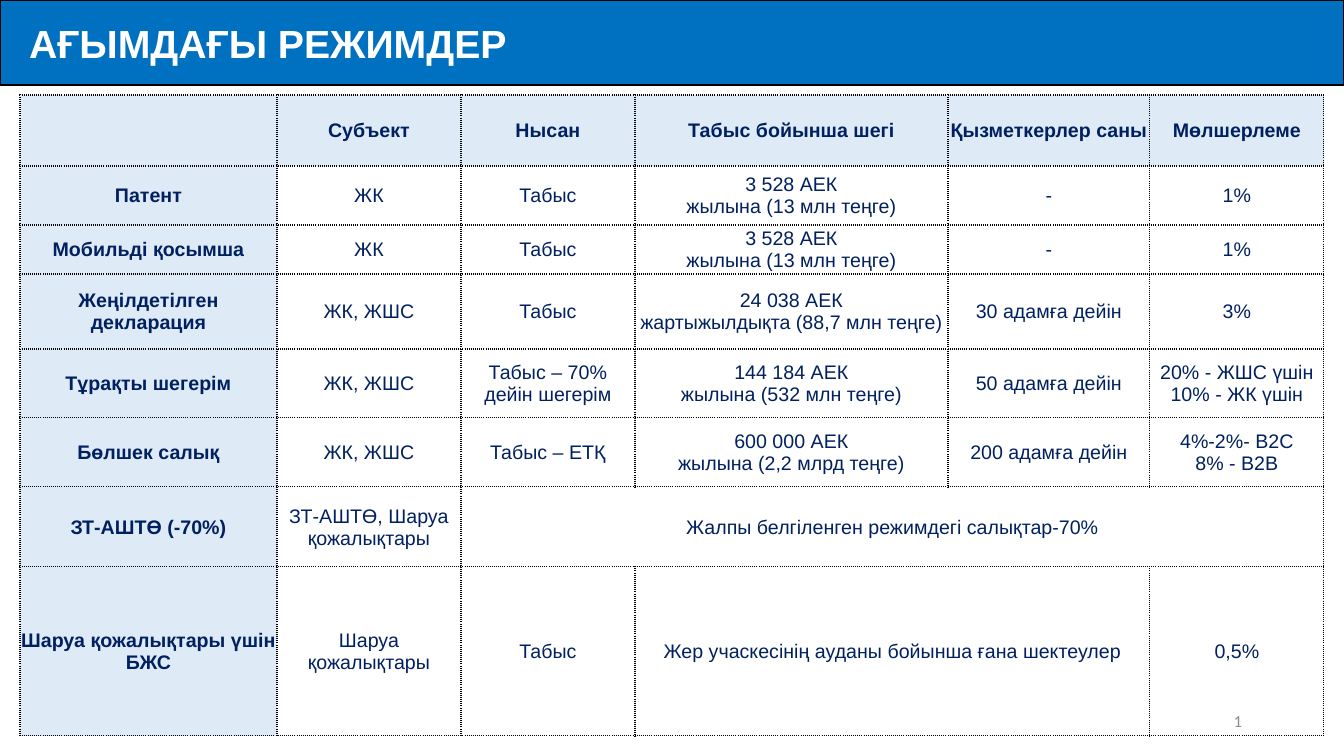
from lxml.etree import SubElement
from pptx import Presentation
from pptx.dml.color import RGBColor
from pptx.enum.text import MSO_ANCHOR, MSO_AUTO_SIZE, PP_ALIGN
from pptx.oxml.ns import qn
from pptx.util import Emu, Pt

HEADING = "АҒЫМДАҒЫ РЕЖИМДЕР"
REGIMES = [
    ["", "Субъект", "Нысан", "Табыс бойынша шегі", "Қызметкерлер саны", "Мөлшерлеме"],
    ["Патент", "ЖК", "Табыс", "3 528 АЕК\vжылына (13 млн теңге)", "-", "1%"],
    ["Мобильді қосымша", "ЖК", "Табыс", "3 528 АЕК\vжылына (13 млн теңге)", "-", "1%"],
    ["Жеңілдетілген декларация", "ЖК, ЖШС", "Табыс",
     "24 038 АЕК\vжартыжылдықта (88,7 млн теңге)", "30 адамға дейін", "3%"],
    ["Тұрақты шегерім", "ЖК, ЖШС", "Табыс – 70% дейін шегерім",
     "144 184 АЕК\vжылына (532 млн теңге)", "50 адамға дейін", "20% - ЖШС үшін\n10% - ЖК үшін"],
    ["Бөлшек салық", "ЖК, ЖШС", "Табыс – ЕТҚ",
     "600 000 АЕК\vжылына (2,2 млрд теңге)", "200 адамға дейін", "4%-2%- В2С\n8% - В2В"],
    ["ЗТ-АШТӨ (-70%)", "ЗТ-АШТӨ, Шаруа қожалықтары",
     "Жалпы белгіленген режимдегі салықтар-70%", "", "", ""],
    ["Шаруа қожалықтары үшін БЖС", "Шаруа қожалықтары", "Табыс",
     "Жер учаскесінің ауданы бойынша ғана шектеулер", "", "0,5%"],
]
MERGES = [(6, 2, 5), (7, 3, 4)]
COLUMN_WIDTHS = [257, 184, 174, 313, 202, 174]
ROW_HEIGHTS = [71, 59, 49, 75, 69, 69, 80, 169]
NAVY, PALE, WHITE, BLACK = "002060", "DEEBF7", "FFFFFF", "000000"


def px(length):
    return Emu(round(length * 914400 / 100.8))


def color(value):
    return RGBColor.from_string(value)


def style(font, size, name, value, bold=False):
    font.size, font.name, font.bold = Pt(size), name, bold
    font.color.rgb = color(value)


def write(frame, text, bold):
    for index, line in enumerate(text.split("\n")):
        paragraph = frame.paragraphs[0] if index == 0 else frame.add_paragraph()
        paragraph.alignment = PP_ALIGN.CENTER
        for part, words in enumerate(line.split("\v")):
            if part:
                paragraph.add_line_break()
            run = paragraph.add_run()
            run.text = words
            style(run.font, 14, "Arial", NAVY, bold)


def dot_borders(cell):
    properties = cell._tc.get_or_add_tcPr()
    for index, side in enumerate(("lnL", "lnR", "lnT", "lnB")):
        border = properties.makeelement(qn(f"a:{side}"), {"w": str(Pt(1))})
        fill = SubElement(border, qn("a:solidFill"))
        SubElement(fill, qn("a:srgbClr"), val=BLACK)
        SubElement(border, qn("a:prstDash"), val="sysDot")
        properties.insert(index, border)


deck = Presentation()
deck.slide_width, deck.slide_height = px(1344), px(756)
slide = deck.slides.add_slide(deck.slide_layouts[5])

banner = slide.shapes.title
banner.left, banner.top, banner.width, banner.height = px(0), px(0), px(1344), px(85)
banner.fill.solid()
banner.fill.fore_color.rgb = color("0070C0")
banner.line.color.rgb = color(BLACK)
banner.line.width = Pt(1)
heading = banner.text_frame
heading.auto_size = MSO_AUTO_SIZE.NONE
heading.vertical_anchor = MSO_ANCHOR.MIDDLE
heading.margin_left = px(29)
heading.paragraphs[0].alignment = PP_ALIGN.LEFT
heading_run = heading.paragraphs[0].add_run()
heading_run.text = HEADING
style(heading_run.font, 28, "Arial", WHITE, True)

regimes = slide.shapes.add_table(
    len(REGIMES), len(COLUMN_WIDTHS), px(20), px(95),
    px(sum(COLUMN_WIDTHS)), px(sum(ROW_HEIGHTS))).table
for column, width in zip(regimes.columns, COLUMN_WIDTHS):
    column.width = px(width)
for row, height in zip(regimes.rows, ROW_HEIGHTS):
    row.height = px(height)
for r, regime in enumerate(REGIMES):
    for c, text in enumerate(regime):
        cell = regimes.cell(r, c)
        is_label = r == 0 or c == 0
        cell.fill.solid()
        cell.fill.fore_color.rgb = color(PALE if is_label else WHITE)
        cell.vertical_anchor = MSO_ANCHOR.MIDDLE
        cell.margin_left = cell.margin_right = cell.margin_top = px(1)
        cell.margin_bottom = 0
        dot_borders(cell)
        if text:
            write(cell.text_frame, text, is_label)
for r, first, last in MERGES:
    regimes.cell(r, first).merge(regimes.cell(r, last))

page_box = slide.shapes.add_textbox(px(950), px(701), px(302), px(40))
page_box.text_frame.word_wrap = True
page_box.text_frame.vertical_anchor = MSO_ANCHOR.MIDDLE
page_line = page_box.text_frame.paragraphs[0]
page_line.alignment = PP_ALIGN.RIGHT
page_run = page_line.add_run()
page_run.text = "1"
style(page_run.font, 12, "Calibri", "8C8C8C")

deck.save("out.pptx")
